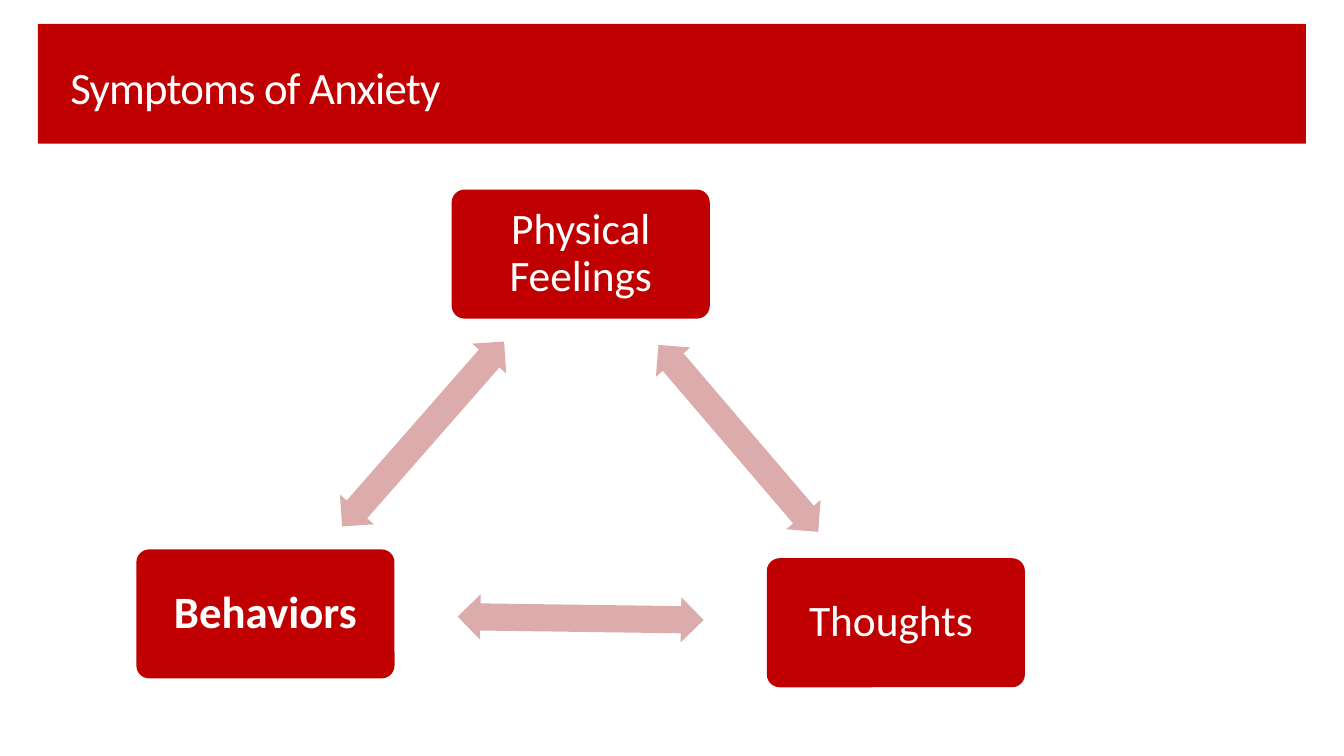
import itertools
import math

import pptx
import pptx.dml.color
import pptx.enum.shapes
import pptx.enum.text
import pptx.util

Pt = pptx.util.Pt
SHAPE = pptx.enum.shapes.MSO_SHAPE
ALIGN = pptx.enum.text.PP_ALIGN
MIDDLE = pptx.enum.text.MSO_ANCHOR.MIDDLE

COLOURS = {"band": "C00000", "arrow": "DCABAB", "text": "FFFFFF"}
NODE_SIZE = (184.4, 92.2)
ARROW_SIZE = (175.6, 32.3)
NODES = [
    ("Physical Feelings", (414.8, 181.5), {"size": Pt(31)}),
    ("Thoughts ", (639.9, 444.8), {"size": Pt(31)}),
    ("Behaviors", (189.6, 438.5), {"size": Pt(32), "bold": True}),
]


def colour(name):
    """Return the named colour."""
    return pptx.dml.color.RGBColor.from_string(COLOURS[name])


def apply(target, values):
    """Set each attribute of the target from a dict of values."""
    for name, value in values.items():
        setattr(target, name, value)


def add_block(page, kind, box, fill):
    """Add a flat filled shape in the given box."""
    block = page.shapes.add_shape(kind, *map(Pt, box))
    block.shadow.inherit = False
    block.fill.solid()
    block.fill.fore_color.rgb = colour(fill)
    block.line.fill.background()
    return block


def write(shape, text, align, inset, font):
    """Write one middle-anchored paragraph into the shape and return its span."""
    frame = shape.text_frame
    apply(frame, {"word_wrap": True, "vertical_anchor": MIDDLE,
                  "margin_left": Pt(inset[0]), "margin_right": Pt(inset[0]),
                  "margin_top": Pt(inset[1]), "margin_bottom": Pt(inset[1])})
    para = frame.paragraphs[0]
    apply(para, {"alignment": align, "line_spacing": 0.9})
    span = para.add_run()
    span.text = text
    apply(span.font, {"name": "Calibri", **font})
    span.font.color.rgb = colour("text")
    return span


def add_header(page, box):
    """Add the title band and its title."""
    left, top, width, height = box
    add_block(page, SHAPE.RECTANGLE, box, "band")
    title = page.shapes.add_textbox(Pt(left + 16.2), Pt(top + 13.2), Pt(409.7), Pt(67.7))
    span = write(title, "Symptoms of Anxiety", ALIGN.LEFT, (7.2, 3.6), {"size": Pt(32)})
    span.font._element.set("spc", "-60")


def centred(centre, size):
    """Return the box of the given size around a centre."""
    return (centre[0] - size[0] / 2, centre[1] - size[1] / 2, *size)


def add_cycle(page, origin):
    """Add the three nodes and the double arrows halfway between them."""
    nodes = [(text, (origin[0] + x, origin[1] + y), font) for text, (x, y), font in NODES]
    for (text, start, font), (_, end, _) in itertools.pairwise(nodes + nodes[:1]):
        node = add_block(page, SHAPE.ROUNDED_RECTANGLE, centred(start, NODE_SIZE), "band")
        node.adjustments[0] = 0.1
        write(node, text, ALIGN.CENTER, (9.4, 9.4), font)
        middle = ((start[0] + end[0]) / 2, (start[1] + end[1]) / 2)
        arrow = add_block(page, SHAPE.LEFT_RIGHT_ARROW, centred(middle, ARROW_SIZE), "arrow")
        arrow.adjustments[0] = 0.6
        arrow.adjustments[1] = 0.5
        arrow.rotation = math.degrees(math.atan2(end[1] - start[1], end[0] - start[0])) % 360


def main():
    """Build and save the deck."""
    deck = pptx.Presentation()
    apply(deck, {"slide_width": Pt(960), "slide_height": Pt(540)})
    page = deck.slides.add_slide(deck.slide_layouts[6])
    add_header(page, (27, 17, 905.8, 85.7))
    add_cycle(page, (0, 0))
    deck.save("out.pptx")


if __name__ == "__main__":
    main()
